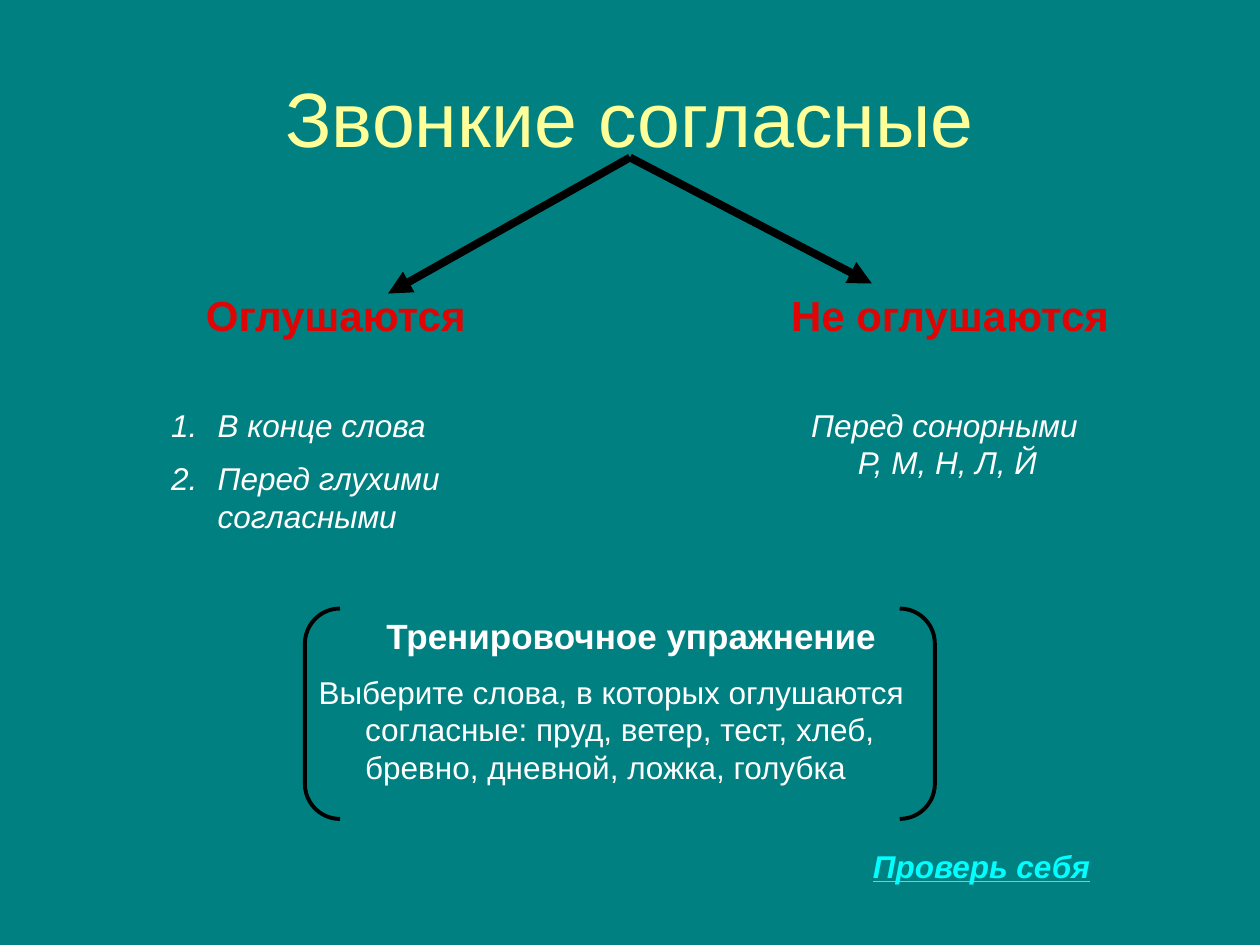
from dataclasses import dataclass

from lxml import etree
from pptx import Presentation
from pptx import util as u
from pptx.dml.color import RGBColor
from pptx.enum import shapes, text
from pptx.oxml.ns import qn


@dataclass(frozen=True)
class Theme:
    font: str = "Arial"
    background: str = "008080"
    title: str = "FFFF99"
    heading: str = "DF0505"
    body: str = "FFFFFF"
    link: str = "00FFFF"
    line: str = "000000"
    title_size: int = 44
    heading_size: int = 24
    exercise_size: int = 20
    body_size: int = 18
    arrow_width: float = 4.5
    bracket_width: float = 2.25


THEME = Theme()


@dataclass(frozen=True)
class Para:
    words: str
    size: int = THEME.body_size
    color: str = THEME.body
    bold: bool = False
    italic: bool = False
    underline: bool = False
    centered: bool = False
    hanging: bool = False
    numbered: bool = False
    before: float = 9


@dataclass(frozen=True)
class Block:
    left: float
    top: float
    width: float
    height: float
    paras: tuple[Para, ...]
    middle: bool = False


def heading(words: str) -> Para:
    return Para(words, THEME.heading_size, THEME.heading, bold=True, centered=True, before=12)


BLOCKS = (
    Block(0.5, 0.3, 9, 1.25, (
        Para("Звонкие согласные", THEME.title_size, THEME.title, centered=True, before=0),
    ), middle=True),
    Block(1.33, 2.25, 2.67, 0.5, (heading("Оглушаются"),)),
    Block(6.08, 2.25, 2.92, 0.5, (heading("Не оглушаются"),)),
    Block(1.25, 3.17, 3, 1.12, (
        Para("В конце слова", italic=True, hanging=True, numbered=True),
        Para("Перед глухими согласными", italic=True, hanging=True, numbered=True),
    )),
    Block(6.33, 3.17, 2.58, 0.7, (
        Para("Перед сонорными Р, М, Н, Л, Й", italic=True, hanging=True),
    )),
    Block(2.42, 4.83, 5.17, 1.88, (
        Para("Тренировочное упражнение", THEME.exercise_size, bold=True, centered=True,
             hanging=True, before=10),
        Para("Выберите слова, в которых оглушаются согласные: пруд, ветер, тест, хлеб, "
             "бревно, дневной, ложка, голубка", hanging=True),
    )),
    Block(6.83, 6.67, 2.75, 0.4, (
        Para("Проверь себя", color=THEME.link, bold=True, italic=True, underline=True),
    )),
)

ARROW_START = (5, 1.25)
ARROW_ENDS = ((3.08, 2.33), (6.92, 2.25))


def set_indent_and_number(para, item: Para) -> None:
    props = para._p.get_or_add_pPr()
    if item.hanging:
        props.set("marL", str(u.Inches(0.38)))
        props.set("indent", str(u.Inches(-0.37)))
    if item.numbered:
        color = etree.SubElement(props, qn("a:buClr"))
        etree.SubElement(color, qn("a:srgbClr"), val=item.color)
        etree.SubElement(props, qn("a:buFont"), typeface=THEME.font)
        etree.SubElement(props, qn("a:buAutoNum"), type="arabicPeriod")


def add_block(page, block: Block) -> None:
    box = page.shapes.add_textbox(*map(u.Inches, (block.left, block.top, block.width, block.height)))
    frame = box.text_frame
    frame.word_wrap = True
    if block.middle:
        frame.vertical_anchor = text.MSO_ANCHOR.MIDDLE
    for index, item in enumerate(block.paras):
        para = frame.add_paragraph() if index else frame.paragraphs[0]
        para.alignment = text.PP_ALIGN.CENTER if item.centered else text.PP_ALIGN.LEFT
        para.space_before = u.Pt(item.before)
        set_indent_and_number(para, item)
        span = para.add_run()
        span.text = item.words
        font = span.font
        font.name = THEME.font
        font.size = u.Pt(item.size)
        font.bold = item.bold
        font.italic = item.italic
        font.underline = item.underline
        font.color.rgb = RGBColor.from_string(item.color)


def style_line(line, width: float) -> None:
    line.color.rgb = RGBColor.from_string(THEME.line)
    line.width = u.Pt(width)


def add_arrow(page, start: tuple[float, float], end: tuple[float, float]) -> None:
    arrow = page.shapes.add_connector(
        shapes.MSO_CONNECTOR.STRAIGHT, *map(u.Inches, (*start, *end)))
    style_line(arrow.line, THEME.arrow_width)
    etree.SubElement(arrow.line._get_or_add_ln(), qn("a:tailEnd"), type="triangle")
    etree.SubElement(arrow._element.spPr, qn("a:effectLst"))


def add_brackets(page) -> None:
    brackets = page.shapes.add_shape(
        shapes.MSO_SHAPE.DOUBLE_BRACKET, *map(u.Inches, (2.42, 4.83, 5, 1.67)))
    brackets.adjustments[0] = 0.167
    brackets.shadow.inherit = False
    brackets.fill.background()
    style_line(brackets.line, THEME.bracket_width)


def main() -> None:
    deck = Presentation()
    deck.slide_width, deck.slide_height = u.Inches(10), u.Inches(7.5)
    page = deck.slides.add_slide(deck.slide_layouts[6])
    fill = page.background.fill
    fill.solid()
    fill.fore_color.rgb = RGBColor.from_string(THEME.background)
    for block in BLOCKS:
        add_block(page, block)
    for end in ARROW_ENDS:
        add_arrow(page, ARROW_START, end)
    add_brackets(page)
    deck.save("out.pptx")


if __name__ == "__main__":
    main()
